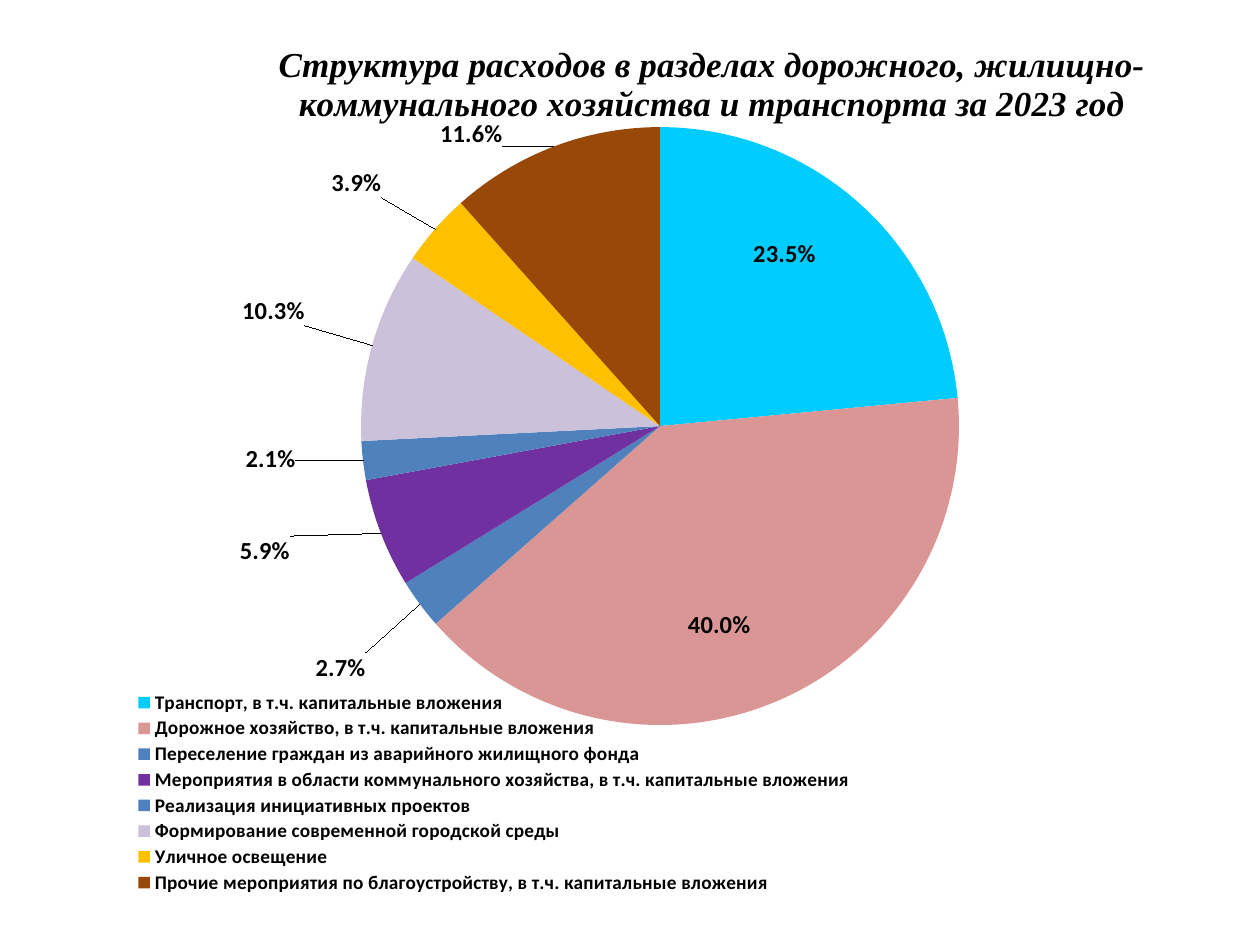
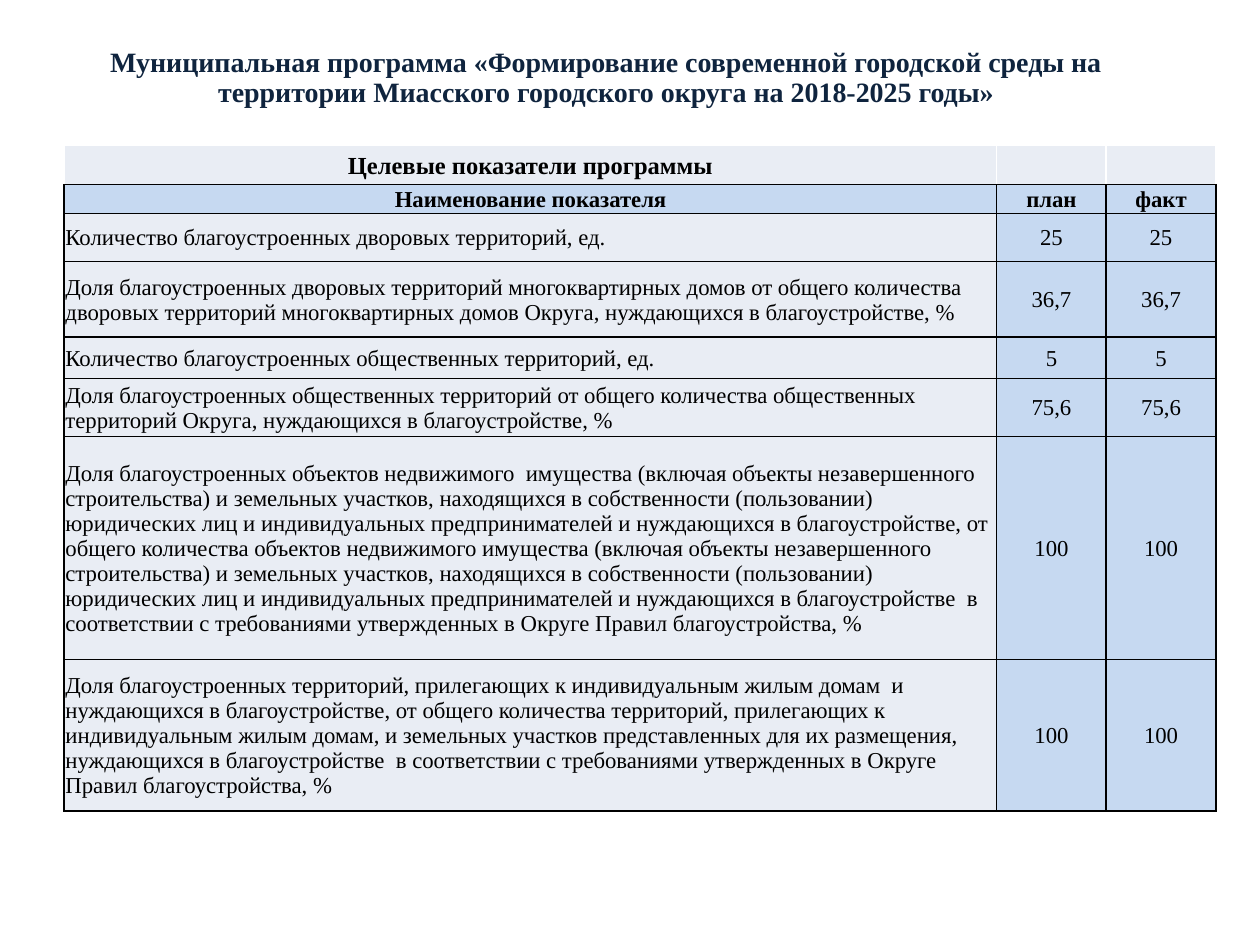
from copy import deepcopy
from lxml import etree
from pptx import Presentation, util as u
from pptx.chart import data as chart_data
from pptx.dml import color
from pptx.enum import chart as chart_enum, text
from pptx.oxml import parse_xml, ns

SERIF = "Times New Roman"
SANS = "Calibri"
BLACK = "000000"
WHITE = "FFFFFF"
NAVY = "0F243E"
PALE = "E9EDF4"
SKY = "C6D9F1"


def rgb(value):
    return color.RGBColor.from_string(value)


def set_layout(element, index, **values):
    for old in element.findall(ns.qn("c:layout")):
        element.remove(old)
    settings = "".join(f'<c:{name} val="{value}"/>' for name, value in values.items())
    element.insert(index, parse_xml(
        f'<c:layout {ns.nsdecls("c")}><c:manualLayout>{settings}</c:manualLayout></c:layout>'))


presentation = Presentation()
presentation.slide_width = u.Inches(10)
presentation.slide_height = u.Inches(7.5)
column = presentation.slide_width / 100
row = presentation.slide_height / 100
blank = presentation.slide_layouts[6]

expenses = [
    ("Транспорт, в т.ч. капитальные вложения", 23.5, "00CCFF", 0.02, -0.07),
    ("Дорожное хозяйство, в т.ч. капитальные вложения", 40, "D99694", 0, 0.07),
    ("Переселение граждан из аварийного жилищного фонда", 2.7, "4F81BD", -0.04, 0.05),
    ("Мероприятия в области коммунального хозяйства, в т.ч. капитальные вложения",
     5.9, "7030A0", -0.07, 0),
    ("Реализация инициативных проектов", 2.1, "4F81BD", -0.05, -0.02),
    ("Формирование современной городской среды", 10.3, "CCC1DA", -0.05, -0.02),
    ("Уличное освещение", 3.9, "FFC000", -0.04, -0.03),
    ("Прочие мероприятия по благоустройству, в т.ч. капитальные вложения",
     11.6, "984807", -0.04, 0.01),
]

slide = presentation.slides.add_slide(blank)
pie_data = chart_data.CategoryChartData()
pie_data.categories = [expense[0] for expense in expenses]
pie_data.add_series("Series 1", [expense[1] for expense in expenses])
chart = slide.shapes.add_chart(
    chart_enum.XL_CHART_TYPE.PIE, u.Emu(int(3.5 * column)), u.Emu(int(2.8 * row)),
    u.Emu(int(95.3 * column)), u.Emu(int(93.47 * row)), pie_data).chart
chart.has_title = True
chart.chart_title.text_frame.text = (
    "Структура расходов в разделах дорожного, жилищно-коммунального хозяйства "
    "и транспорта за 2023 год")
chart.has_legend = True
chart.legend.position = chart_enum.XL_LEGEND_POSITION.TOP
chart.legend.include_in_layout = False

plot = chart.plots[0]
plot.vary_by_categories = True
series = plot.series[0]
labels = series.data_labels
labels.number_format = "0.0%"
labels.number_format_is_linked = False
labels.show_value = False
labels.show_percentage = True

title_font = chart.chart_title.text_frame.paragraphs[0].runs[0].font
label_format = dict(name=SANS, size=u.Pt(14), bold=True)
chart_formats = [
    (chart.font, dict(name=SANS, size=u.Pt(10))),
    (title_font, dict(name=SERIF, size=u.Pt(20), bold=True, italic=True)),
    (chart.legend.font, dict(name=SANS, size=u.Pt(11), bold=True)),
    (labels.font, label_format),
]
for index, (name, value, fill, dx, dy) in enumerate(expenses):
    point = series.points[index]
    point.format.fill.solid()
    point.format.fill.fore_color.rgb = rgb(fill)
    inside = value > 20
    positions = chart_enum.XL_LABEL_POSITION
    point.data_label.position = positions.CENTER if inside else positions.OUTSIDE_END
    chart_formats.append((point.data_label.font, label_format))
for font, values in chart_formats:
    for name, value in values.items():
        setattr(font, name, value)
    font.color.rgb = rgb(BLACK)

number_format = chart.element.xpath(".//c:dLbls/c:numFmt")[0]
for label, expense in zip(chart.element.xpath(".//c:dLbl"), expenses):
    label.find(ns.qn("c:showVal")).set("val", "0")
    label.find(ns.qn("c:showPercent")).set("val", "1")
    label.insert(1, deepcopy(number_format))
    set_layout(label, 1, x=expense[3], y=expense[4])
set_layout(chart.element.xpath(".//c:plotArea")[0], 0, layoutTarget="inner",
           xMode="edge", yMode="edge", x=0.264, y=0.114, w=0.498, h=0.677)
set_layout(chart.element.xpath("./c:chart/c:title")[0], 1,
           xMode="edge", yMode="edge", x=0.19, y=0.01)
set_layout(chart.element.xpath(".//c:legend")[0], 1,
           xMode="edge", yMode="edge", x=0.07, y=0.75, w=0.61, h=0.235)

slide = presentation.slides.add_slide(blank)
heading = slide.shapes.add_textbox(
    int(2.8 * column), int(4.4 * row), int(90.6 * column), int(7.73 * row))
frame = heading.text_frame
frame.word_wrap = True
frame.vertical_anchor = text.MSO_ANCHOR.MIDDLE
paragraph = frame.paragraphs[0]
paragraph.text = ("Муниципальная программа «Формирование современной городской среды "
                  "на территории Миасского городского округа на 2018-2025 годы»")
paragraph.alignment = text.PP_ALIGN.CENTER
paragraph.line_spacing = 0.9
font = paragraph.runs[0].font
for name, value in dict(name=SERIF, size=u.Pt(16), bold=True).items():
    setattr(font, name, value)
font.color.rgb = rgb(NAVY)

indicators = [
    (0.31, "Целевые показатели программы", "", ""),
    (0.23, "Наименование показателя", "план", "факт"),
    (0.38, "Количество благоустроенных дворовых территорий, ед.", "25", "25"),
    (0.6, "Доля благоустроенных дворовых территорий многоквартирных домов от общего "
          "количества дворовых территорий многоквартирных домов Округа, нуждающихся "
          "в благоустройстве, %", "36,7", "36,7"),
    (0.33, "Количество благоустроенных общественных территорий, ед.", "5", "5"),
    (0.46, "Доля благоустроенных общественных территорий от общего количества "
           "общественных территорий Округа, нуждающихся в благоустройстве, %",
     "75,6", "75,6"),
    (1.77, "Доля благоустроенных объектов недвижимого  имущества (включая объекты "
           "незавершенного строительства) и земельных участков, находящихся в "
           "собственности (пользовании) юридических лиц и индивидуальных "
           "предпринимателей и нуждающихся в благоустройстве, от общего количества "
           "объектов недвижимого имущества (включая объекты незавершенного "
           "строительства) и земельных участков, находящихся в собственности "
           "(пользовании) юридических лиц и индивидуальных предпринимателей и "
           "нуждающихся в благоустройстве  в соответствии с требованиями утвержденных "
           "в Округе Правил благоустройства, %", "100", "100"),
    (1.2, "Доля благоустроенных территорий, прилегающих к индивидуальным жилым домам  "
          "и нуждающихся в благоустройстве, от общего количества территорий, "
          "прилегающих к индивидуальным жилым домам, и земельных участков "
          "представленных для их размещения, нуждающихся в благоустройстве  в "
          "соответствии с требованиями утвержденных в Округе Правил благоустройства, %",
     "100", "100"),
]
table = slide.shapes.add_table(
    len(indicators), 3, int(5.1 * column), int(15.4 * row),
    int(91.4 * column), int(70.4 * row)).table
table.first_row = False
table.horz_banding = False
for table_column, share in zip(table.columns, (74, 8.7, 8.7)):
    table_column.width = int(share * column)

for row_index, (height, *values) in enumerate(indicators):
    table.rows[row_index].height = u.Inches(height)
    for column_index, value in enumerate(values):
        cell = table.cell(row_index, column_index)
        banner = row_index == 0
        named = row_index > 1 and column_index == 0
        cell_format = dict(vertical_anchor=text.MSO_ANCHOR.MIDDLE, margin_bottom=0,
                           margin_left=u.Inches(0.01), margin_right=u.Inches(0.01),
                           margin_top=u.Inches(0.01))
        for name, setting in cell_format.items():
            setattr(cell, name, setting)
        paragraph = cell.text_frame.paragraphs[0]
        paragraph.alignment = text.PP_ALIGN.LEFT if named else text.PP_ALIGN.CENTER
        if value:
            run = paragraph.add_run()
            run.text = value
            run_format = dict(name=SERIF, size=u.Pt(14 if banner else 13),
                              bold=row_index < 2)
            for name, setting in run_format.items():
                setattr(run.font, name, setting)
            run.font.color.rgb = rgb(BLACK)
        properties = cell._tc.get_or_add_tcPr()
        for side in ("lnL", "lnR", "lnT", "lnB"):
            line = etree.SubElement(properties, ns.qn(f"a:{side}"), w=str(u.Pt(1)))
            fill = etree.SubElement(line, ns.qn("a:solidFill"))
            tone = WHITE if banner and side != "lnB" else BLACK
            etree.SubElement(fill, ns.qn("a:srgbClr"), val=tone)
        cell.fill.solid()
        cell.fill.fore_color.rgb = rgb(PALE if banner or named else SKY)

presentation.save("out.pptx")
